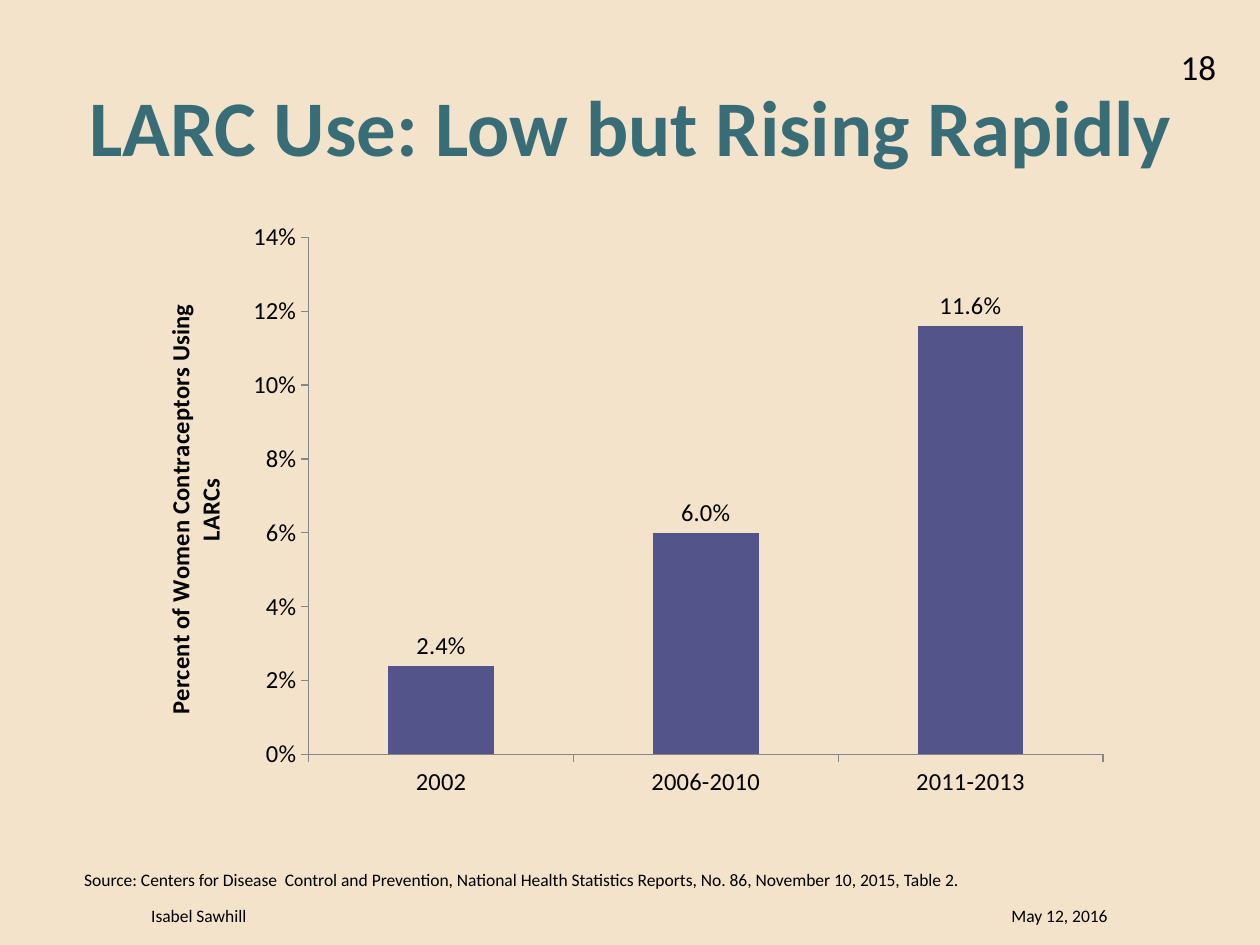
from lxml import etree
from pptx import Presentation
from pptx.chart.data import CategoryChartData
from pptx.dml.color import RGBColor
from pptx.enum.chart import XL_CHART_TYPE, XL_LABEL_POSITION, XL_TICK_MARK
from pptx.enum.text import MSO_ANCHOR, PP_ALIGN
from pptx.oxml.ns import qn
from pptx.util import Inches, Pt

COLORS = {"background": "F3E3CA", "title": "386D77", "text": "000000",
          "bar": "53548A", "axis": "868686"}
FONT = "Calibri"


def set_font(font, size, color="text", bold=False):
    font.name = FONT
    font.size = Pt(size)
    font.bold = bold
    font.color.rgb = RGBColor.from_string(COLORS[color])


def add_text(page, text, left, top, width, height, size, color="text", bold=False,
             align=PP_ALIGN.LEFT, anchor=MSO_ANCHOR.MIDDLE, inset=0.1, tab=None):
    """Add a one-paragraph text box; tab is a right-aligned stop in inches."""
    box = page.shapes.add_textbox(Inches(left), Inches(top), Inches(width), Inches(height))
    frame = box.text_frame
    frame.word_wrap = True
    frame.vertical_anchor = anchor
    frame.margin_left = frame.margin_right = Inches(inset)
    frame.margin_top = frame.margin_bottom = Inches(min(inset, 0.05))
    para = frame.paragraphs[0]
    para.text = text
    para.alignment = align
    if tab:
        tabs = etree.SubElement(para._p.get_or_add_pPr(), qn("a:tabLst"))
        etree.SubElement(tabs, qn("a:tab"), pos=str(Inches(tab)), algn="r")
    set_font(para.font, size, color, bold)


deck = Presentation()
deck.slide_width, deck.slide_height = Inches(10), Inches(7.5)
page = deck.slides.add_slide(deck.slide_layouts[6])
page.background.fill.solid()
page.background.fill.fore_color.rgb = RGBColor.from_string(COLORS["background"])

add_text(page, "18", 7.42, 0.33, 2.33, 0.4, 20, align=PP_ALIGN.RIGHT)
add_text(page, "Isabel Sawhill\tMay 12, 2016", 0.75, 7.12, 8.5, 0.3, 10, inset=0.45, tab=7.59)
add_text(page, "LARC Use: Low but Rising Rapidly", 0.54, 0.58, 8.93, 0.83, 45, "title",
         bold=True, align=PP_ALIGN.CENTER, anchor=MSO_ANCHOR.BOTTOM, inset=0.04)

data = CategoryChartData(number_format="0.0%")
data.categories = ["2002", "2006-2010", "2011-2013"]
data.add_series("Series 1", [0.024, 0.06, 0.116])
chart = page.shapes.add_chart(XL_CHART_TYPE.COLUMN_CLUSTERED, Inches(1.08), Inches(1.67),
                              Inches(7.83), Inches(4.75), data).chart
chart.has_legend = False
chart.has_title = False
set_font(chart.font, 14)

for axis in (chart.category_axis, chart.value_axis):
    axis.has_major_gridlines = False
    axis.major_tick_mark = XL_TICK_MARK.OUTSIDE
    axis.minor_tick_mark = XL_TICK_MARK.NONE
    axis.format.line.width = Pt(0.75)
    axis.format.line.color.rgb = RGBColor.from_string(COLORS["axis"])

value_axis = chart.value_axis
value_axis.minimum_scale, value_axis.maximum_scale = 0, 0.14
value_axis.major_unit = 0.02
value_axis.tick_labels.number_format = "0%"
value_axis.tick_labels.number_format_is_linked = False
axis_title = value_axis.axis_title.text_frame
axis_title.text = "Percent of Women Contraceptors Using LARCs"
set_font(axis_title.paragraphs[0].font, 14, bold=True)

plot = chart.plots[0]
plot.gap_width = 150
plot.vary_by_categories = False
bars = plot.series[0]
bars.format.fill.solid()
bars.format.fill.fore_color.rgb = RGBColor.from_string(COLORS["bar"])
labels = bars.data_labels
labels.show_value = True
labels.position = XL_LABEL_POSITION.OUTSIDE_END
labels.number_format = "0.0%"
labels.number_format_is_linked = False
set_font(labels.font, 14)

add_text(page, "Source: Centers for Disease  Control and Prevention, National Health Statistics "
         "Reports, No. 86, November 10, 2015, Table 2.", 0.57, 6.85, 8.86, 0.27, 10,
         anchor=MSO_ANCHOR.TOP)

deck.save("out.pptx")
